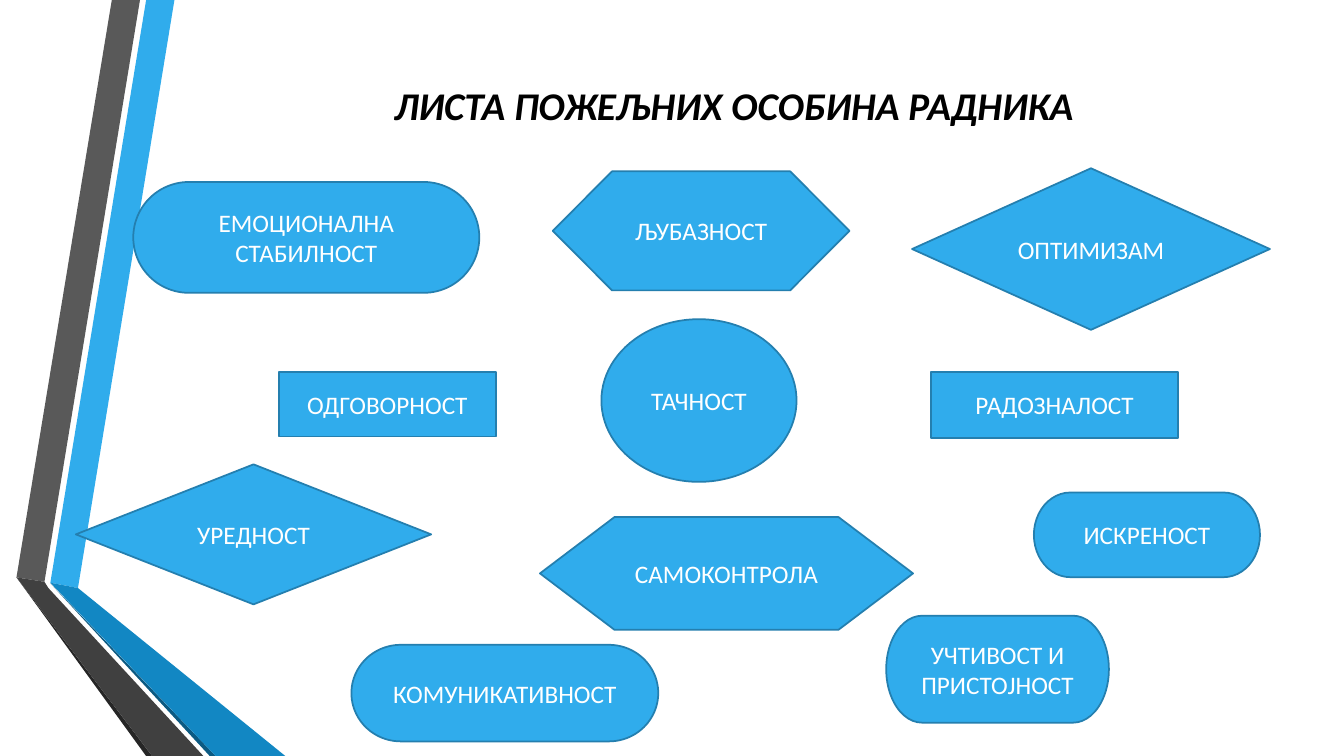
import pptx
import pptx.util
import pptx.dml.color
import pptx.enum.shapes
import pptx.enum.text

Pt = pptx.util.Pt
RGBColor = pptx.dml.color.RGBColor
SHAPE = pptx.enum.shapes.MSO_SHAPE

BLUE = RGBColor(0x30, 0xAC, 0xEC)
OUTLINE_BLUE = RGBColor(0x24, 0x7F, 0xAF)
DEEP_BLUE = RGBColor(0x12, 0x87, 0xC3)
DARK_BLUE = RGBColor(0x0C, 0x5A, 0x82)
GRAY = RGBColor(0x59, 0x59, 0x59)
DEEP_GRAY = RGBColor(0x40, 0x40, 0x40)
DARK_GRAY = RGBColor(0x26, 0x26, 0x26)
BLACK = RGBColor(0, 0, 0)
WHITE = RGBColor(0xFF, 0xFF, 0xFF)

FONT = "Calibri"
SLIDE_WIDTH, SLIDE_HEIGHT = 960, 540

RIBBONS = [
    (BLUE, [(36, 416.2), (55.7, 420), (124.6, 0), (104.4, 0)]),
    (GRAY, [(100, 0), (79.9, 0), (11.8, 412.4), (31.8, 415.6)]),
    (DARK_GRAY, [(11.8, 412.4), (104.4, SLIDE_HEIGHT), (108.7, SLIDE_HEIGHT)]),
    (DARK_BLUE, [(36, 416.7), (149.8, SLIDE_HEIGHT), (154.1, SLIDE_HEIGHT)]),
    (DEEP_BLUE, [(36, 416.2), (154.1, SLIDE_HEIGHT), (203.8, SLIDE_HEIGHT),
                 (55.7, 420)]),
    (DEEP_GRAY, [(145.3, SLIDE_HEIGHT), (34.6, 420), (31.8, 415.6),
                 (11.8, 412.4), (108.7, SLIDE_HEIGHT)]),
]

TRAITS = [
    ("ИСКРЕНОСТ", SHAPE.FLOWCHART_TERMINATOR, 738.5, 351.8, 161.5, 60.5),
    ("ОПТИМИЗАМ", SHAPE.FLOWCHART_DECISION, 651.5, 120.2, 255.6, 115.4),
    ("ЉУБАЗНОСТ", SHAPE.FLOWCHART_PREPARATION, 394.8, 122.4, 212, 85),
    ("РАДОЗНАЛОСТ", SHAPE.MATH_MINUS, 633, 189.4, 240.5, 199.6),
    ("УРЕДНОСТ", SHAPE.FLOWCHART_DECISION, 54.2, 331.7, 253.8, 100),
    ("КОМУНИКАТИВНОСТ", SHAPE.FLOWCHART_TERMINATOR, 251, 460.6, 219.2, 69),
    ("САМОКОНТРОЛА", SHAPE.FLOWCHART_PREPARATION, 385.7, 369.3, 266.5, 80.6),
    ("ОДГОВОРНОСТ", SHAPE.MATH_MINUS, 171.2, 190.8, 211, 196),
    ("УЧТИВОСТ И ПРИСТОЈНОСТ", SHAPE.FLOWCHART_TERMINATOR, 633, 439.8, 159.1, 76.4),
    ("ТАЧНОСТ", SHAPE.OVAL, 429.6, 228, 139.4, 116.2),
    ("ЕМОЦИОНАЛНА СТАБИЛНОСТ", SHAPE.FLOWCHART_TERMINATOR, 95.2, 130, 247.2, 79.2),
]


def write_text(shape, text, size, color, emphasis=False):
    text_frame = shape.text_frame
    text_frame.word_wrap = True
    text_frame.vertical_anchor = pptx.enum.text.MSO_ANCHOR.MIDDLE
    text_frame.text = text
    paragraph = text_frame.paragraphs[0]
    paragraph.alignment = pptx.enum.text.PP_ALIGN.CENTER
    font = paragraph.runs[0].font
    font.name = FONT
    font.size = Pt(size)
    font.color.rgb = color
    font.bold = emphasis
    font.italic = emphasis


def paint(shape, color):
    shape.shadow.inherit = False
    shape.fill.solid()
    shape.fill.fore_color.rgb = color


def add_ribbon(slide, color, corners):
    points = [(Pt(x), Pt(y)) for x, y in corners]
    builder = slide.shapes.build_freeform(*points[0])
    builder.add_line_segments(points[1:], close=True)
    ribbon = builder.convert_to_shape()
    paint(ribbon, color)
    ribbon.line.fill.background()


def add_title(slide, text):
    title = slide.shapes.add_textbox(Pt(95), Pt(27.4), Pt(724.3), Pt(95))
    write_text(title, text, 28, BLACK, emphasis=True)
    title.text_frame.margin_left = Pt(141)


def add_trait(slide, text, kind, left, top, width, height):
    trait = slide.shapes.add_shape(kind, Pt(left), Pt(top), Pt(width), Pt(height))
    paint(trait, BLUE)
    trait.line.color.rgb = OUTLINE_BLUE
    trait.line.width = Pt(1.25)
    write_text(trait, text, 18, WHITE)


def main():
    presentation = pptx.Presentation()
    presentation.slide_width = Pt(SLIDE_WIDTH)
    presentation.slide_height = Pt(SLIDE_HEIGHT)
    slide = presentation.slides.add_slide(presentation.slide_layouts[6])
    for color, corners in RIBBONS:
        add_ribbon(slide, color, corners)
    add_title(slide, "ЛИСТА ПОЖЕЉНИХ ОСОБИНА РАДНИКА")
    for trait in TRAITS:
        add_trait(slide, *trait)
    presentation.save("out.pptx")


if __name__ == "__main__":
    main()
